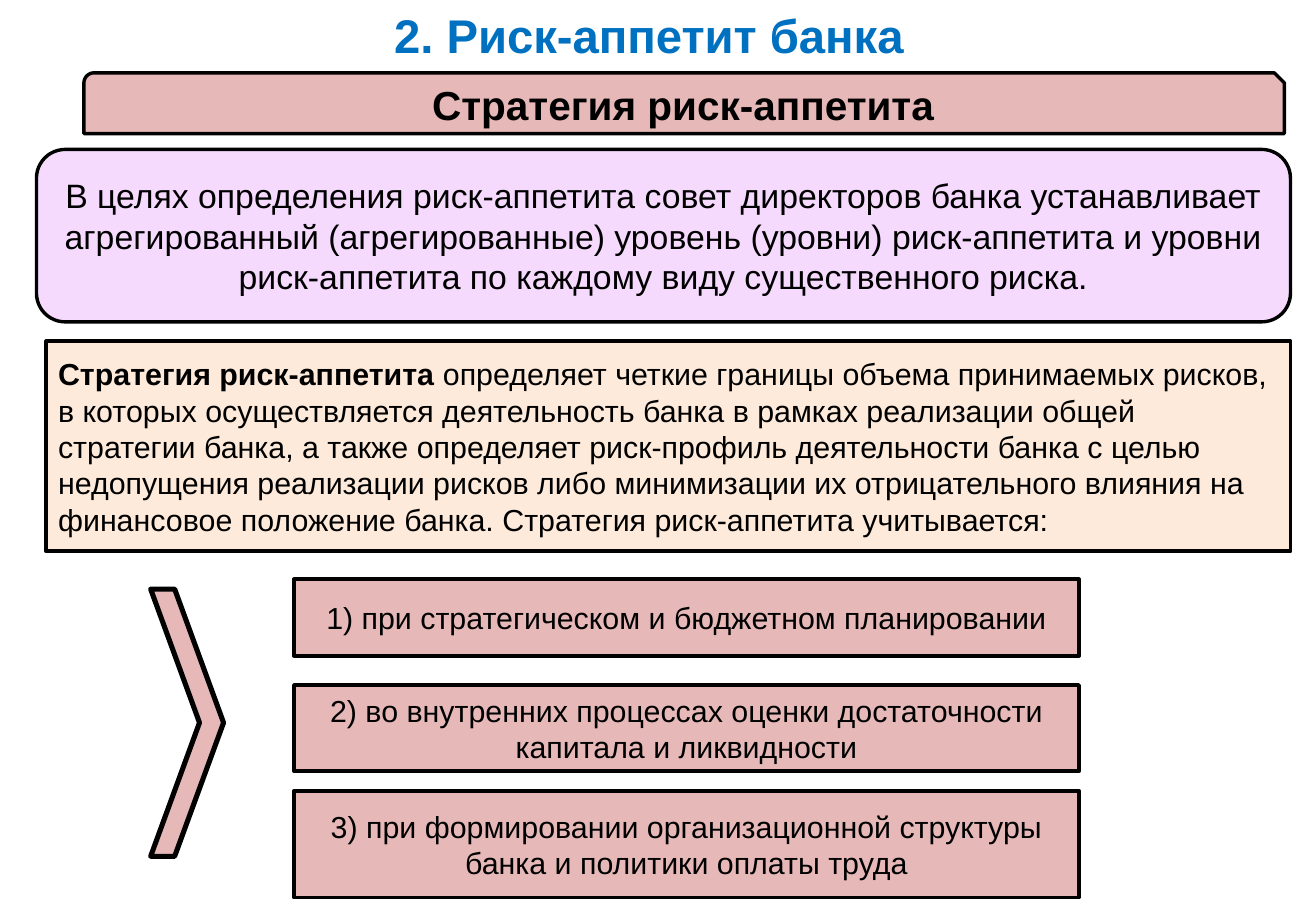
import pptx
import pptx.util
import pptx.dml.color
import pptx.enum.shapes
import pptx.enum.text

Inches = pptx.util.Inches
SHAPE = pptx.enum.shapes.MSO_SHAPE
ALIGN = pptx.enum.text.PP_ALIGN
ANCHOR = pptx.enum.text.MSO_ANCHOR

COLORS = {
    "title": "0070C0",
    "text": "000000",
    "line": "000000",
    "rose": "E6B9B8",
    "lilac": "F6DAFE",
    "cream": "FDEADA",
}


class RiskSlide:
    font_name = "Arial"

    def __init__(self, prs):
        self.s = prs.slides.add_slide(prs.slide_layouts[6])

    def color(self, key):
        return pptx.dml.color.RGBColor.from_string(COLORS[key])

    def add_text(self, sp, runs, size, align=ALIGN.CENTER, color="text", anchor=ANCHOR.MIDDLE):
        tf = sp.text_frame
        tf.word_wrap = True
        tf.vertical_anchor = anchor
        p = tf.paragraphs[0]
        p.alignment = align
        for text, bold in runs:
            r = p.add_run()
            r.text = text
            fmt = {"name": self.font_name, "size": pptx.util.Pt(size), "bold": bold}
            for name, value in fmt.items():
                setattr(r.font, name, value)
            r.font.color.rgb = self.color(color)

    def title(self, box, text):
        sp = self.s.shapes.add_textbox(*map(Inches, box))
        self.add_text(sp, [(text, True)], 28, color="title", anchor=ANCHOR.TOP)

    def shape(self, kind, box, fill, width):
        sp = self.s.shapes.add_shape(kind, *map(Inches, box))
        sp.shadow.inherit = False
        sp.fill.solid()
        sp.fill.fore_color.rgb = self.color(fill)
        sp.line.color.rgb = self.color("line")
        sp.line.width = pptx.util.Pt(width)
        return sp

    def panel(self, kind, box, fill, width, runs, size, align=ALIGN.CENTER):
        sp = self.shape(kind, box, fill, width)
        self.add_text(sp, runs, size, align)

    def chevron(self, box, fill, width, point):
        sp = self.shape(SHAPE.CHEVRON, box, fill, width)
        sp.adjustments[0] = point


def main():
    prs = pptx.Presentation()
    prs.slide_width = Inches(10.83)
    prs.slide_height = Inches(7.5)
    slide = RiskSlide(prs)

    slide.panel(SHAPE.SNIP_ROUND_RECTANGLE, (0.69, 0.6, 9.88, 0.5), "rose", 2,
                [("Стратегия риск-аппетита", True)], 24)
    slide.panel(SHAPE.ROUNDED_RECTANGLE, (0.3, 1.23, 10.32, 1.42), "lilac", 2,
                [("В целях определения риск-аппетита совет директоров банка устанавливает "
                  "агрегированный (агрегированные) уровень (уровни) риск-аппетита и уровни "
                  "риск-аппетита по каждому виду существенного риска.", False)], 20)
    slide.panel(SHAPE.RECTANGLE, (0.38, 2.81, 10.24, 1.73), "cream", 2.25,
                [("Стратегия риск-аппетита ", True),
                 ("определяет четкие границы объема принимаемых рисков, в которых "
                  "осуществляется деятельность банка в рамках реализации общей стратегии "
                  "банка, а также определяет риск-профиль деятельности банка с целью "
                  "недопущения реализации рисков либо минимизации их отрицательного влияния "
                  "на финансовое положение банка. Стратегия риск-аппетита учитывается:", False)],
                18, ALIGN.LEFT)

    uses = [
        (4.77, 0.63, "1) при стратегическом и бюджетном планировании"),
        (5.64, 0.71, "2) во внутренних процессах оценки достаточности капитала и ликвидности"),
        (6.51, 0.88, "3) при формировании организационной структуры банка и политики оплаты труда"),
    ]
    for top, height, text in uses:
        slide.panel(SHAPE.RECTANGLE, (2.42, top, 6.46, height), "rose", 2.25,
                    [(text, False)], 18)

    slide.title((0.38, 0, 9.92, 0.57), "2. Риск-аппетит банка")
    slide.chevron((1.24, 4.85, 0.6, 2.2), "rose", 3, 0.67)

    prs.save("out.pptx")


if __name__ == "__main__":
    main()
